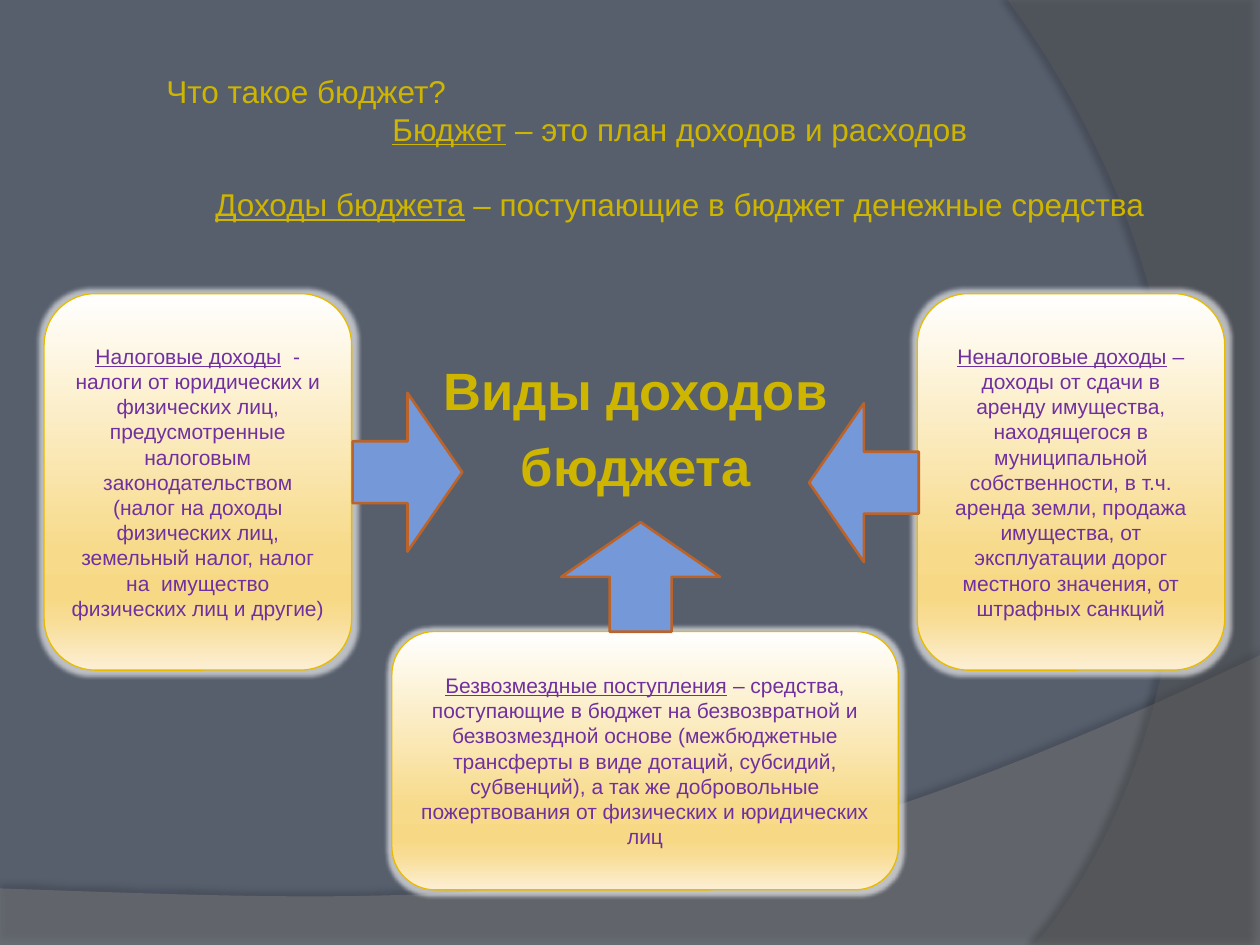
from lxml.etree import SubElement
from pptx import Presentation
from pptx.dml.color import RGBColor
from pptx.enum.shapes import MSO_SHAPE
from pptx.enum.text import MSO_ANCHOR, MSO_AUTO_SIZE, PP_ALIGN
from pptx.oxml.ns import qn
from pptx.util import Cm, Pt

LEFT, MID = PP_ALIGN.LEFT, PP_ALIGN.CENTER
GOLD, PURPLE = "CEB500", "7030A0"
STOPS = [(0, "FFFFFE"), (68, "F7DA8A"), (81, "F7D985"), (86, "F8DC93"), (100, "FCEFD4")]

# Each line: underlined words, plain words, alignment, space before in points
HEAD = [
    ("", "Что такое бюджет?", LEFT, 0),
    ("Бюджет", " – это план доходов и расходов", MID, 0),
    ("Доходы бюджета", " – поступающие в бюджет денежные средства", MID, 21.5),
]
TOPIC = [("", "Виды доходов", MID, 0), ("", "бюджета", MID, 7.5)]

# Each card: left, top, width, height in cm, underlined words, plain words
CARDS = [
    (18.49, 5.92, 6.2, 7.59, "Неналоговые доходы",
     " – доходы от сдачи в аренду имущества, находящегося в муниципальной "
     "собственности, в т.ч. аренда земли, продажа имущества, от эксплуатации "
     "дорог местного значения, от штрафных санкций"),
    (0.89, 5.92, 6.2, 7.59, "Налоговые доходы",
     "  - налоги от юридических и физических лиц, предусмотренные налоговым "
     "законодательством (налог на доходы физических лиц, земельный налог, "
     "налог на  имущество физических лиц и другие)"),
    (7.9, 12.73, 10.21, 5.21, "Безвозмездные поступления",
     " – средства, поступающие в бюджет на безвозвратной и безвозмездной основе "
     "(межбюджетные трансферты в виде дотаций, субсидий, субвенций), а так же "
     "добровольные пожертвования от физических и юридических лиц"),
]
# Each arrow: left, top, turn
ARROWS = [(11.81, 10.03, 270), (7.11, 7.92, 0), (16.31, 8.13, 180)]

# Each wave: fill, opacity, shadow opacity, shadow reach, shadow angle, path
# A path item is one point, or three points of a Bezier curve, in cm
WAVES = [
    ("7F7F7F", 45, 35, 3.5, 270,
     [(0, 17.91), (0, 19.05), (25.4, 19.05), (25.4, 13.21),
      ((14.2, 18.52), (9.93, 18.26), (0, 17.91))]),
    ("5E5E5E", 40, 45, 4, 180,
     [(25.4, 0), (25.4, 19.05), (20.85, 19.05),
      ((23.75, 15.72), (25.86, 7.62), (20.32, 0))]),
]


def color(code):
    return RGBColor.from_string(code)


def node(parent, tag, **attrs):
    return SubElement(parent, qn(tag), {k: str(v) for k, v in attrs.items()})


def tint(parent, code, alpha):
    node(node(parent, "a:srgbClr", val=code), "a:alpha", val=alpha * 1000)


def effect(shape, tag, code, alpha, **attrs):
    shape.shadow.inherit = False
    box = shape._element.spPr.find(qn("a:effectLst"))
    tint(node(box, tag, **attrs), code, alpha)


def trace(path, steps=40):
    """Return the points of a path in EMU, with its curves sampled."""
    points = []
    for item in path:
        if len(item) == 2:
            points.append(item)
            continue
        a, (b, c, d) = points[-1], item
        for i in range(1, steps + 1):
            t = i / steps
            u = 1 - t
            points.append(tuple(
                u**3 * p + 3 * u * u * t * q + 3 * u * t * t * r + t**3 * s
                for p, q, r, s in zip(a, b, c, d)))
    return [(Cm(x), Cm(y)) for x, y in points]


def place(shape, *spots):
    for name, spot in zip(("left", "top", "width", "height"), spots):
        setattr(shape, name, Cm(spot))


def write(shape, lines, size, code, bold=False, **frame):
    text = shape.text_frame
    frame = {"word_wrap": True, "auto_size": MSO_AUTO_SIZE.NONE, **frame}
    for name, value in frame.items():
        setattr(text, name, value)
    for i, (under, plain, align, gap) in enumerate(lines):
        para = text.add_paragraph() if i else text.paragraphs[0]
        para.alignment, para.space_before = align, Pt(gap)
        for words, line in ((under, True), (plain, False)):
            if not words:
                continue
            run = para.add_run()
            run.text = words
            look = {"name": "Arial", "size": Pt(size), "bold": bold, "underline": line}
            for name, value in look.items():
                setattr(run.font, name, value)
            run.font.color.rgb = color(code)


def outline(shape, code, width):
    shape.line.color.rgb = color(code)
    shape.line.width = Pt(width)


def add_wave(shapes, code, alpha, dark, reach, angle, path):
    first, *rest = trace(path)
    pen = shapes.build_freeform(*first)
    pen.add_line_segments(rest, close=True)
    wave = pen.convert_to_shape()
    wave.fill.solid()
    wave.fill.fore_color.rgb = color(code)
    fill = wave._element.spPr.find(qn("a:solidFill"))
    node(fill[0], "a:alpha", val=alpha * 1000)
    wave.line.fill.background()
    effect(wave, "a:outerShdw", "000000", dark, blurRad=Pt(4), dist=Pt(reach),
           dir=angle * 60000, rotWithShape=0)


def add_card(shapes, x, y, wide, high, under, plain):
    card = shapes.add_shape(MSO_SHAPE.ROUNDED_RECTANGLE, Cm(x), Cm(y), Cm(wide), Cm(high))
    card.fill.gradient()
    card.fill.gradient_angle = 270
    stops = card._element.spPr.find(qn("a:gradFill")).find(qn("a:gsLst"))
    for old in list(stops):
        stops.remove(old)
    for pos, code in STOPS:
        node(node(stops, "a:gs", pos=pos * 1000), "a:srgbClr", val=code)
    outline(card, "E8BA00", 0.75)
    effect(card, "a:glow", "FFFFFF", 60, rad=Pt(5))
    write(card, [(under, plain, MID, 0)], 12, PURPLE, vertical_anchor=MSO_ANCHOR.MIDDLE)


def add_arrow(shapes, x, y, turn):
    arrow = shapes.add_shape(MSO_SHAPE.RIGHT_ARROW, Cm(x), Cm(y), Cm(2.21), Cm(3.2))
    arrow.rotation = turn
    arrow.adjustments[0], arrow.adjustments[1] = 0.39, 0.5
    arrow.fill.solid()
    arrow.fill.fore_color.rgb = color("7598D9")
    outline(arrow, "BC6329", 1.5)
    arrow.shadow.inherit = False


def main():
    deck = Presentation()
    deck.slide_width, deck.slide_height = Cm(25.4), Cm(19.05)
    slide = deck.slides.add_slide(deck.slide_layouts[5])
    slide.background.fill.solid()
    slide.background.fill.fore_color.rgb = color("575F6D")
    shapes = slide.shapes
    for wave in WAVES:
        add_wave(shapes, *wave)

    topic = shapes.add_textbox(0, 0, 0, 0)
    place(topic, 0.71, 5.54, 24.21, 11.99)
    write(topic, TOPIC, 30, GOLD, bold=True, margin_top=Cm(1.67))

    title = shapes.title
    place(title, 3.1, 1.32, 21.21, 3.33)
    write(title, HEAD, 18, GOLD, vertical_anchor=MSO_ANCHOR.TOP)
    shapes._spTree.append(title._element)  # in front of the waves

    for card in CARDS:
        add_card(shapes, *card)
    for arrow in ARROWS:
        add_arrow(shapes, *arrow)
    deck.save("out.pptx")


if __name__ == "__main__":
    main()
